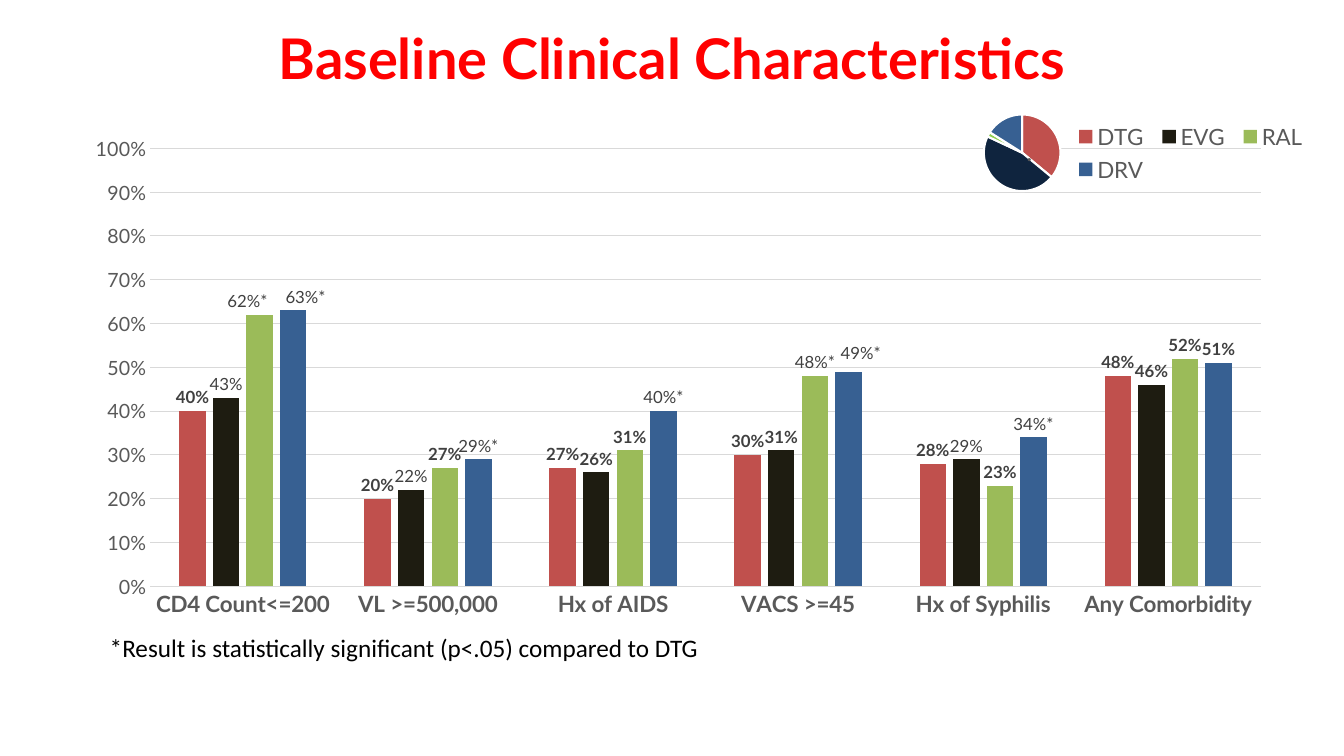
"""Build a slide of baseline clinical characteristics with a column chart and a small pie."""
from lxml import etree
from pptx import Presentation
from pptx import util as u
from pptx.chart.data import CategoryChartData
from pptx.dml.color import RGBColor
from pptx.enum import chart as kinds, text
from pptx.oxml import parse_xml
from pptx.oxml.ns import nsdecls, qn

WIDTH, HEIGHT = 13.33, 7.5
TITLE = "Baseline Clinical Characteristics"
FOOTNOTE = "*Result is statistically significant (p<.05) compared to DTG"
COLORS = {
    "title": "FF0000", "note": "000000", "axis": "595959", "label": "404040",
    "grid": "D9D9D9", "gap": "FFFFFF",
    "DTG": "C0504D", "EVG": "1E1C11", "RAL": "9BBB59", "DRV": "376092",
}
GROUPS = ["CD4 Count<=200", "VL >=500,000", "Hx of AIDS", "VACS >=45",
          "Hx of Syphilis", "Any Comorbidity"]
RATES = {
    "DTG": [0.40, 0.20, 0.27, 0.30, 0.28, 0.48],
    "EVG": [0.43, 0.22, 0.26, 0.31, 0.29, 0.46],
    "RAL": [0.62, 0.27, 0.31, 0.48, 0.23, 0.52],
    "DRV": [0.63, 0.29, 0.40, 0.49, 0.34, 0.51],
}
PLAIN_LABELS = {
    "EVG": {0: "43%", 1: "22%", 4: "29%"},
    "RAL": {0: "62%*", 3: "48%*"},
    "DRV": {0: "63%*", 1: "29%*", 2: "40%*", 3: "49%*", 4: "34%*"},
}
LABEL_SHIFTS = {("RAL", 0): (-0.01, 0), ("DRV", 0): (0.01, 0), ("DRV", 3): (0.01, -0.01)}
SHARES = [36, 46, 2, 16]
SHARE_COLORS = ["C0504D", "0F243E", "92D050", "376092"]

TITLE_BOX = (0.82, 0.16, 11.69, 0.81)
COLUMN_BOX = (0.82, 1.11, 12.21, 5.1)
NOTE_BOX = (0.99, 6.22, 6.94, 0.42)
PIE_BOX = (9.1, 1.11, 2.15, 0.81)


def inches(box):
    return [u.Inches(length) for length in box]


def style_font(font, size, color, face="Lato", bold=False):
    font.size, font.name, font.bold = u.Pt(size), face, bold
    font.color.rgb = RGBColor.from_string(COLORS[color])


def write(frame, words, align=None, **style):
    para = frame.paragraphs[0]
    para.alignment = align
    span = para.add_run()
    span.text = words
    style_font(span.font, **style)


def paint(fill, color):
    fill.solid()
    fill.fore_color.rgb = RGBColor.from_string(color)


def rule(line, color, width):
    line.color.rgb = RGBColor.from_string(COLORS[color])
    line.width = u.Pt(width)


def place(element, after, x, y, w=None, h=None, inner=False, edge=True):
    """Give a chart part a manual layout in shares of the chart."""
    for old in element.findall(qn("c:layout")):
        element.remove(old)
    layout = parse_xml(f"<c:layout {nsdecls('c')}><c:manualLayout/></c:layout>")
    settings = [("layoutTarget", "inner" if inner else None),
                ("xMode", "edge" if edge else None), ("yMode", "edge" if edge else None),
                ("x", x), ("y", y), ("w", w), ("h", h)]
    for name, value in settings:
        if value is not None:
            etree.SubElement(layout[0], qn(f"c:{name}")).set("val", str(value))
    if after is None:
        element.insert(0, layout)
    else:
        element.find(qn(f"c:{after}")).addnext(layout)


def add_chart(page, kind, box, categories, series, plot_area):
    data = CategoryChartData(number_format="0%" if len(series) > 1 else "General")
    data.categories = categories
    for name, values in series.items():
        data.add_series(name, values)
    chart = page.shapes.add_chart(kind, *inches(box), data).chart
    chart.font.size, chart.font.name = u.Pt(10), "Calibri"
    space = chart.element
    space.find(qn("c:chart")).addnext(parse_xml(
        f"<c:spPr {nsdecls('c', 'a')}><a:noFill/><a:ln><a:noFill/></a:ln></c:spPr>"))
    place(space.find(f".//{qn('c:plotArea')}"), None, *plot_area, inner=True)
    return chart


def add_columns(page):
    chart = add_chart(page, kinds.XL_CHART_TYPE.COLUMN_CLUSTERED, COLUMN_BOX,
                      GROUPS, RATES, (0.055, 0.071, 0.902, 0.852))
    chart.has_title = False
    plot = chart.plots[0]
    plot.gap_width, plot.overlap, plot.vary_by_categories = 219, -27, False

    groups, rates = chart.category_axis, chart.value_axis
    for axis, size, bold in ((groups, 16, True), (rates, 14, False)):
        axis.major_tick_mark = axis.minor_tick_mark = kinds.XL_TICK_MARK.NONE
        style_font(axis.tick_labels.font, size, "axis", bold=bold)
    rule(groups.format.line, "grid", 0.75)
    rates.minimum_scale, rates.maximum_scale, rates.major_unit = 0, 1, 0.1
    rates.tick_labels.number_format = "0%"
    rates.tick_labels.number_format_is_linked = False
    rates.format.line.fill.background()
    rule(rates.major_gridlines.format.line, "grid", 0.75)

    for series in plot.series:
        paint(series.format.fill, COLORS[series.name])
        series.invert_if_negative = False
        labels = series.data_labels
        labels.show_value = True
        labels.number_format, labels.number_format_is_linked = "0%", False
        labels.position = kinds.XL_LABEL_POSITION.OUTSIDE_END
        style_font(labels.font, 12, "label", bold=True)
        for index, words in PLAIN_LABELS.get(series.name, {}).items():
            label = series.points[index].data_label
            write(label.text_frame, words, size=12, color="label")
            label.position = kinds.XL_LABEL_POSITION.OUTSIDE_END
            shift = LABEL_SHIFTS.get((series.name, index))
            if shift:
                entry = next(item for item in series.data_labels._element.findall(qn("c:dLbl"))
                             if item.find(qn("c:idx")).get("val") == str(index))
                place(entry, "idx", *shift, edge=False)

    chart.has_legend = True
    legend = chart.legend
    legend.position = kinds.XL_LEGEND_POSITION.CORNER
    legend.include_in_layout = False
    style_font(legend.font, 16, "axis")
    place(legend._element, "legendPos", 0.8, 0.01, 0.2, 0.14)


def add_pie(page):
    chart = add_chart(page, kinds.XL_CHART_TYPE.PIE, PIE_BOX, ["1", "2", "3", "4"],
                      {".": SHARES}, (0.268, 0.032, 0.43, 0.939))
    chart.has_legend = False
    chart.has_title = True
    write(chart.chart_title.text_frame, ".", size=18.6, color="axis", face="Calibri")
    place(chart.chart_title._element, "tx", 0.48, 0.2)
    plot = chart.plots[0]
    plot.vary_by_categories = True
    for index, color in enumerate(SHARE_COLORS):
        look = plot.series[0].points[index].format
        paint(look.fill, color)
        rule(look.line, "gap", 1.5)


def main():
    deck = Presentation()
    deck.slide_width, deck.slide_height = u.Inches(WIDTH), u.Inches(HEIGHT)
    page = deck.slides.add_slide(deck.slide_layouts[5])

    title = page.shapes.title
    title.left, title.top, title.width, title.height = inches(TITLE_BOX)
    title.text_frame.vertical_anchor = text.MSO_ANCHOR.MIDDLE
    write(title.text_frame, TITLE, align=text.PP_ALIGN.CENTER,
          size=40, color="title", bold=True)

    add_columns(page)
    note = page.shapes.add_textbox(*inches(NOTE_BOX)).text_frame
    note.word_wrap = True
    write(note, FOOTNOTE, size=18, color="note", face="Calibri")
    add_pie(page)
    deck.save("out.pptx")


if __name__ == "__main__":
    main()
